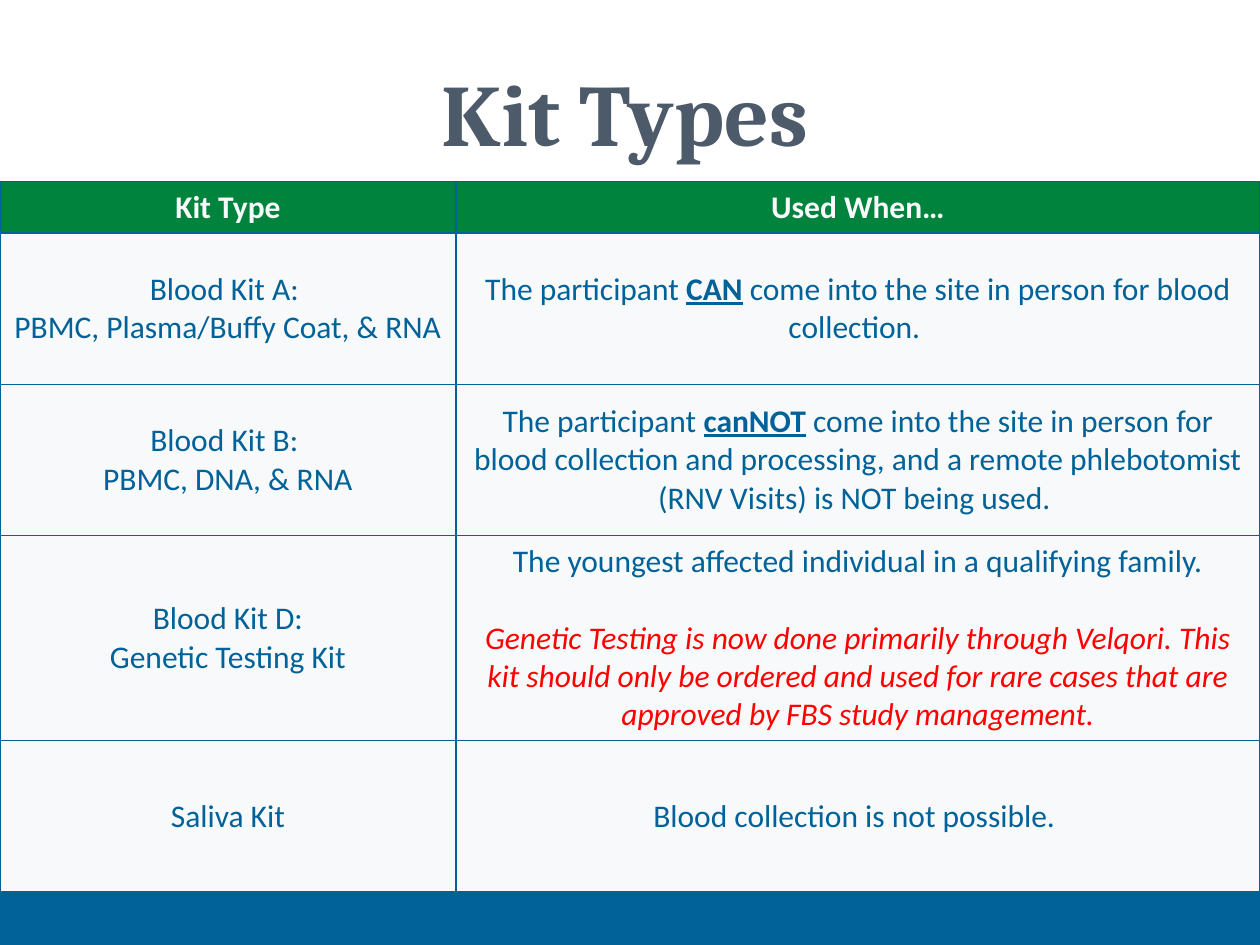
from dataclasses import dataclass

import lxml.etree
import pptx
import pptx.dml.color
import pptx.enum.shapes
import pptx.enum.text
import pptx.oxml.ns
import pptx.slide
import pptx.table
import pptx.util
from pptx.util import Cm, Pt


@dataclass(frozen=True)
class Theme:
    blue: str = "006298"
    green: str = "00843D"
    pale: str = "F8F9FA"
    slate: str = "4D5A69"
    red: str = "FF0000"
    title_font: str = "Cambria"
    body_font: str = "Calibri"
    title_size: int = 50
    body_size: int = 18
    border_width: int = 1


THEME = Theme()


@dataclass(frozen=True)
class Phrase:
    text: str
    color: str = THEME.blue
    bold: bool = False
    underline: bool = False
    italic: bool = False


@dataclass(frozen=True)
class Line:
    phrases: tuple[Phrase, ...]
    space_before: int = 0


@dataclass(frozen=True)
class KitRow:
    height: float
    kit: tuple[Line, ...]
    used_when: tuple[Line, ...]
    fill: str = THEME.pale


def plain(*texts: str) -> tuple[Line, ...]:
    return tuple(Line((Phrase(text),)) for text in texts)


def heading(text: str) -> tuple[Line, ...]:
    return (Line((Phrase(text, THEME.pale, bold=True),)),)


def participant(ability: str, ending: str) -> tuple[Line, ...]:
    """One sentence in which the ability to attend is stressed."""
    return (Line((Phrase("The participant "),
                  Phrase(ability, bold=True, underline=True),
                  Phrase(ending))),)


ROW_HEIGHT = 3.05
COLUMN_WIDTHS = (9.19, 16.21)
ROWS = (
    KitRow(1.04, heading("Kit Type"), heading("Used When…"), THEME.green),
    KitRow(ROW_HEIGHT, plain("Blood Kit A: ", "PBMC, Plasma/Buffy Coat, & RNA"),
           participant("CAN", " come into the site in person for blood collection. ")),
    KitRow(ROW_HEIGHT, plain("Blood Kit B: ", "PBMC, DNA, & RNA"),
           participant("canNOT", " come into the site in person for blood collection and "
                       "processing, and a remote phlebotomist (RNV Visits) is NOT being used. ")),
    KitRow(4.13, plain("Blood Kit D:", "Genetic Testing Kit"),
           plain("The youngest affected individual in a qualifying family.")
           + (Line((Phrase("Genetic Testing is now done primarily through Velqori. This kit "
                           "should only be ordered and used for rare cases that are approved "
                           "by FBS study management.", THEME.red, italic=True),),
                   space_before=22),)),
    KitRow(ROW_HEIGHT, plain("Saliva Kit"), plain("Blood collection is not possible. ")),
)


def rgb(color: str) -> pptx.dml.color.RGBColor:
    return pptx.dml.color.RGBColor.from_string(color)


def add_title(slide: pptx.slide.Slide, text: str) -> None:
    title = slide.shapes.title
    title.left, title.top, title.width, title.height = Cm(1.17), Cm(0.79), Cm(22.86), Cm(3.18)
    title.text_frame.text = text
    title.text_frame.vertical_anchor = pptx.enum.text.MSO_ANCHOR.MIDDLE
    paragraph = title.text_frame.paragraphs[0]
    paragraph.alignment = pptx.enum.text.PP_ALIGN.CENTER
    paragraph.line_spacing = 0.9
    font = paragraph.runs[0].font
    font.name, font.size, font.bold = THEME.title_font, Pt(THEME.title_size), True
    font.color.rgb = rgb(THEME.slate)


def add_footer_band(slide: pptx.slide.Slide) -> None:
    band = slide.shapes.add_shape(pptx.enum.shapes.MSO_SHAPE.RECTANGLE,
                                  Cm(0), Cm(17.78), Cm(25.4), Cm(1.27))
    band.shadow.inherit = False
    band.fill.solid()
    band.fill.fore_color.rgb = rgb(THEME.blue)
    band.line.fill.background()


def add_borders(cell: pptx.table._Cell) -> None:
    properties = cell._tc.get_or_add_tcPr()
    qn = pptx.oxml.ns.qn
    for index, side in enumerate(("lnL", "lnR", "lnT", "lnB")):
        border = lxml.etree.Element(qn(f"a:{side}"), w=str(Pt(THEME.border_width)))
        fill = lxml.etree.SubElement(border, qn("a:solidFill"))
        lxml.etree.SubElement(fill, qn("a:srgbClr"), val=THEME.blue)
        properties.insert(index, border)


def fill_cell(cell: pptx.table._Cell, lines: tuple[Line, ...], fill: str) -> None:
    cell.fill.solid()
    cell.fill.fore_color.rgb = rgb(fill)
    cell.vertical_anchor = pptx.enum.text.MSO_ANCHOR.MIDDLE
    add_borders(cell)
    for index, line in enumerate(lines):
        frame = cell.text_frame
        paragraph = frame.add_paragraph() if index else frame.paragraphs[0]
        paragraph.alignment = pptx.enum.text.PP_ALIGN.CENTER
        if line.space_before:
            paragraph.space_before = Pt(line.space_before)
        for phrase in line.phrases:
            run = paragraph.add_run()
            run.text = phrase.text
            font = run.font
            font.name, font.size = THEME.body_font, Pt(THEME.body_size)
            font.bold, font.italic = phrase.bold, phrase.italic
            font.underline = phrase.underline
            font.color.rgb = rgb(phrase.color)


def add_kit_table(slide: pptx.slide.Slide) -> None:
    table = slide.shapes.add_table(
        len(ROWS), len(COLUMN_WIDTHS), Cm(0), Cm(3.66),
        Cm(sum(COLUMN_WIDTHS)), Cm(sum(row.height for row in ROWS))).table
    for column, width in zip(table.columns, COLUMN_WIDTHS):
        column.width = Cm(width)
    for index, row in enumerate(ROWS):
        table.rows[index].height = Cm(row.height)
        fill_cell(table.cell(index, 0), row.kit, row.fill)
        fill_cell(table.cell(index, 1), row.used_when, row.fill)


def main() -> None:
    presentation = pptx.Presentation()
    presentation.slide_width, presentation.slide_height = Cm(25.4), Cm(19.05)
    title_only = presentation.slide_layouts.get_by_name("Title Only")
    slide = presentation.slides.add_slide(title_only)
    add_footer_band(slide)
    add_title(slide, "Kit Types")
    add_kit_table(slide)
    presentation.save("out.pptx")


if __name__ == "__main__":
    main()
